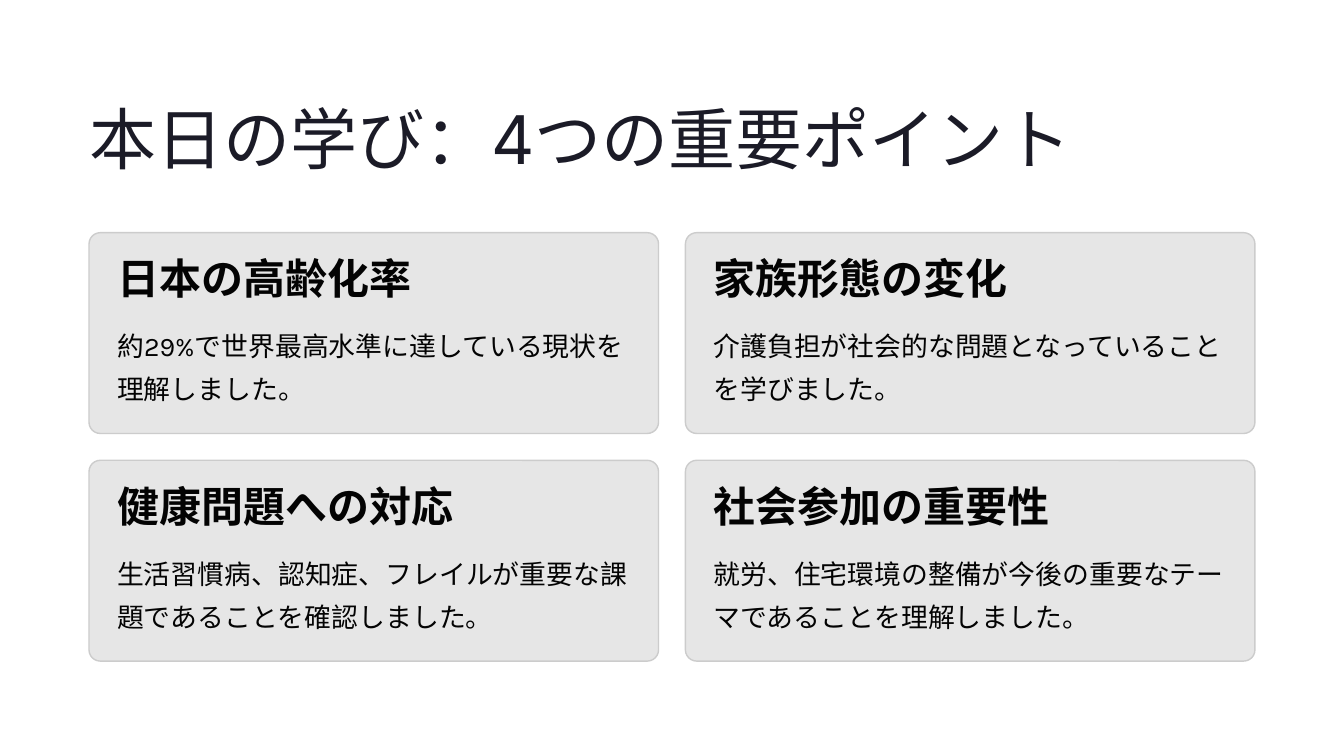
from pptx import Presentation
from pptx.dml.color import RGBColor
from pptx.enum.shapes import MSO_SHAPE as Shape
from pptx.util import Inches, Pt

# Card grid, in inches
LEFT, TOP = 1.06, 2.77
CARD_W, CARD_H, GAP = 6.78, 2.39, 0.32
PADDING = 0.335
COLUMNS = 2
GRID_W = COLUMNS * CARD_W + (COLUMNS - 1) * GAP

POINTS = [
    ("日本の高齢化率", "約29%で世界最高水準に達している現状を理解しました。"),
    ("家族形態の変化", "介護負担が社会的な問題となっていることを学びました。"),
    ("健康問題への対応", "生活習慣病、認知症、フレイルが重要な課題であることを確認しました。"),
    ("社会参加の重要性", "就労、住宅環境の整備が今後の重要なテーマであることを理解しました。"),
]


def color(hex_code):
    return RGBColor.from_string(hex_code)


def add_text(text, box, font, size, spacing, ink, bold=False, wrap=False):
    frame = slide.shapes.add_textbox(*map(Inches, box)).text_frame
    frame.margin_left = frame.margin_right = 0
    frame.margin_top = frame.margin_bottom = 0
    frame.word_wrap = wrap
    paragraph = frame.paragraphs[0]
    paragraph.line_spacing = Pt(spacing)
    run = paragraph.add_run()
    run.text = text
    run.font.name, run.font.size, run.font.bold = font, Pt(size), bold
    run.font.color.rgb = color(ink)


deck = Presentation()
deck.slide_width, deck.slide_height = Inches(16), Inches(9)
slide = deck.slides.add_slide(deck.slide_layouts[6])

# Title, as wide as the card grid so that it stays on one line
add_text("本日の学び：4つの重要ポイント", (LEFT, 1.12, GRID_W, 1),
         "Inter", 57.5, 72, "1B1B27", wrap=True)

# Four learning points
for index, (heading, lesson) in enumerate(POINTS):
    row, column = divmod(index, COLUMNS)
    x = LEFT + column * (CARD_W + GAP)
    y = TOP + row * (CARD_H + GAP)

    card = slide.shapes.add_shape(
        Shape.ROUNDED_RECTANGLE, *map(Inches, (x, y, CARD_W, CARD_H)))
    card.adjustments[0] = 0.056
    card.shadow.inherit = False
    card.fill.solid()
    card.fill.fore_color.rgb = color("E6E6E6")
    card.line.color.rgb = color("CCCCCC")
    card.line.width = Pt(1.2)

    text_x, text_y = x + PADDING, y + PADDING
    add_text(heading, (text_x, text_y, 4.01, 0.5),
             "Inter", 36, 36, "030303", bold=True)
    add_text(lesson, (text_x, text_y + 0.7, CARD_W - 2 * PADDING, 1.03),
             "Karla", 23, 36.5, "030303", wrap=True)

deck.save("out.pptx")
